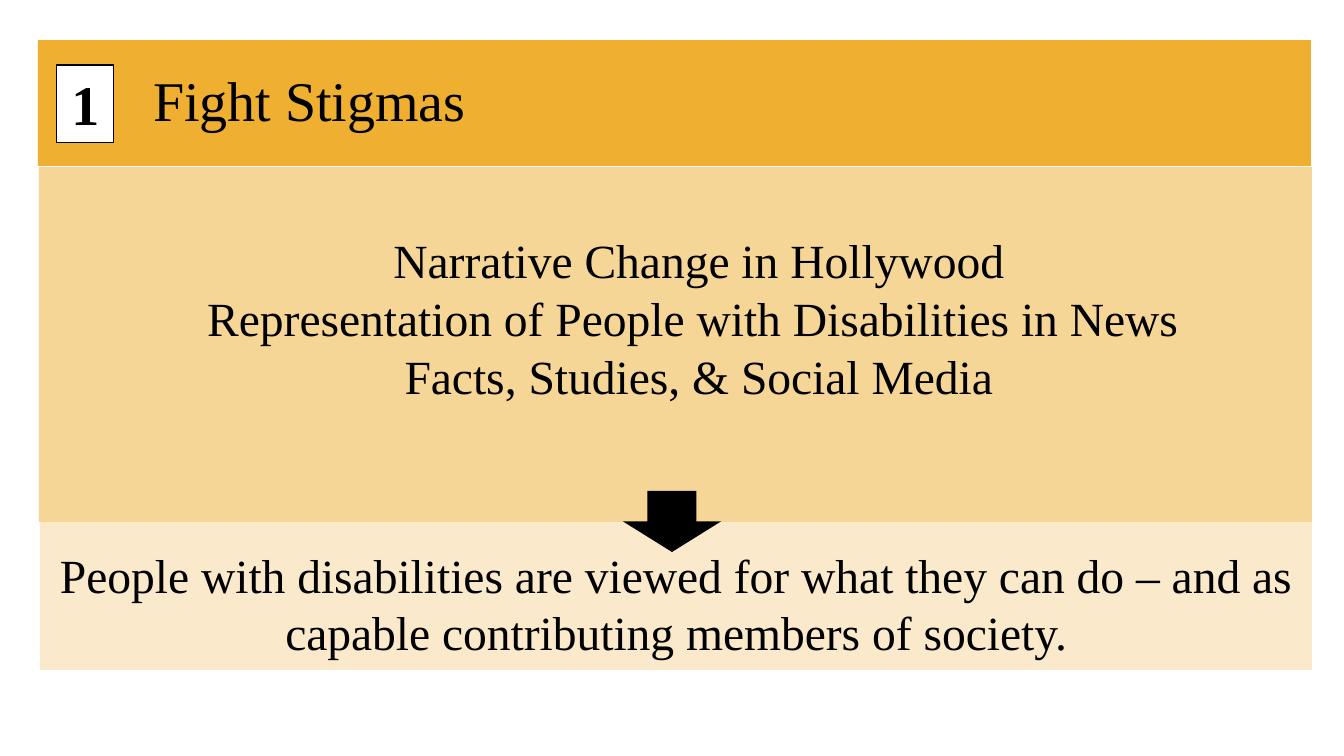
import pptx
import pptx.util
import pptx.dml.color
import pptx.enum.shapes
import pptx.enum.text
import pptx.oxml.ns
from lxml import etree

SCALE = 914400 / 100.8
FONT = "Times New Roman"
GOLD, BLACK, WHITE = "EFAF30", "000000", "FFFFFF"
KIND = pptx.enum.shapes.MSO_SHAPE
ALIGN = pptx.enum.text.PP_ALIGN
ANCHOR = pptx.enum.text.MSO_ANCHOR


def px(num):
    return pptx.util.Emu(round(num * SCALE))


def tint(hue):
    return pptx.dml.color.RGBColor.from_string(hue)


def paint(shape, hue, alpha=100):
    """Fill the shape; alpha is its opacity in percent."""
    shape.fill.solid()
    shape.fill.fore_color.rgb = tint(hue)
    if alpha < 100:
        clr = shape.element.spPr.find(".//" + pptx.oxml.ns.qn("a:srgbClr"))
        etree.SubElement(clr, pptx.oxml.ns.qn("a:alpha"), val=str(alpha * 1000))


def block(slide, kind, box, hue, alpha=100):
    shape = slide.shapes.add_shape(kind, *map(px, box))
    shape.shadow.inherit = False
    shape.line.fill.background()
    paint(shape, hue, alpha)
    return shape


def place(holder, box):
    holder.left, holder.top, holder.width, holder.height = map(px, box)


def write(para, text, size, align, bold=False):
    para.alignment = align
    run = para.add_run()
    run.text = text
    font = run.font
    font.name, font.size, font.bold = FONT, pptx.util.Pt(size), bold
    font.color.rgb = tint(BLACK)


def label(slide, box, text, size, bold=False):
    shape = slide.shapes.add_textbox(*map(px, box))
    frame = shape.text_frame
    frame.word_wrap = True
    write(frame.paragraphs[0], text, size, ALIGN.CENTER, bold)
    return shape


def head(slide, box, text):
    title = slide.shapes.title
    place(title, box)
    frame = title.text_frame
    frame.vertical_anchor = ANCHOR.MIDDLE
    frame.auto_size = pptx.enum.text.MSO_AUTO_SIZE.NONE
    para = frame.paragraphs[0]
    para.line_spacing = 0.9
    write(para, text, 40, ALIGN.LEFT)
    return title


def points(slide, box, lines):
    """Fill the body with centred, indented lines without bullets."""
    body = slide.placeholders[1]
    place(body, box)
    frame = body.text_frame
    frame.vertical_anchor = ANCHOR.TOP
    frame.auto_size = pptx.enum.text.MSO_AUTO_SIZE.NONE
    for i, line in enumerate(lines):
        para = frame.add_paragraph() if i else frame.paragraphs[0]
        para.level = 1
        props = para._p.get_or_add_pPr()
        props.set("marL", str(px(50)))
        props.set("indent", "0")
        etree.SubElement(props, pptx.oxml.ns.qn("a:buNone"))
        para.line_spacing = 0.9
        para.space_before = pptx.util.Pt(5 if i else 0)
        write(para, line, 34, ALIGN.CENTER)
    return body


def main():
    deck = pptx.Presentation()
    deck.slide_width, deck.slide_height = px(1344), px(756)
    slide = deck.slides.add_slide(deck.slide_layouts[1])

    band = block(slide, KIND.RECTANGLE, (38, 40, 1273, 126), GOLD)
    title = head(slide, (143, 40, 1074, 126), "Fight Stigmas")
    band.element.addnext(title.element)

    badge = label(slide, (57, 65, 57, 78), "1", 40, True)
    paint(badge, WHITE)
    badge.line.color.rgb = tint(BLACK)
    badge.line.width = pptx.util.Pt(0.75)

    block(slide, KIND.RECTANGLE, (40, 522, 1272, 148), GOLD, 25)
    panel = block(slide, KIND.RECTANGLE, (39, 167, 1273, 355), GOLD, 50)
    body = points(slide, (38, 232, 1272, 229), [
        "Narrative Change in Hollywood",
        "Representation of People with Disabilities in News ",
        "Facts, Studies, & Social Media",
    ])
    panel.element.addnext(body.element)

    block(slide, KIND.DOWN_ARROW, (623, 491, 98, 61), BLACK)
    label(slide, (40, 541, 1273, 126),
          "People with disabilities are viewed for what they can do – "
          "and as capable contributing members of society.", 34)
    deck.save("out.pptx")


if __name__ == "__main__":
    main()
